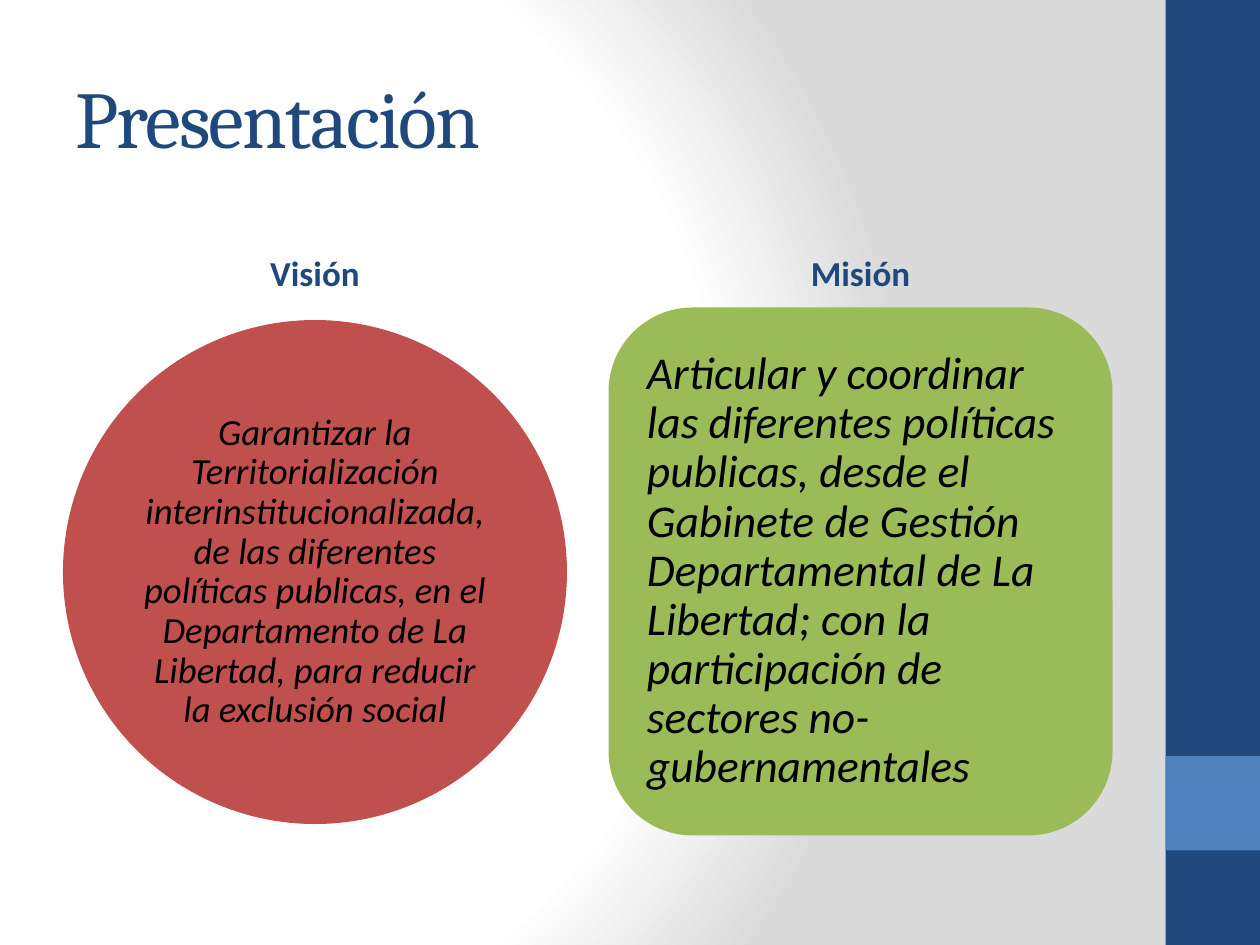
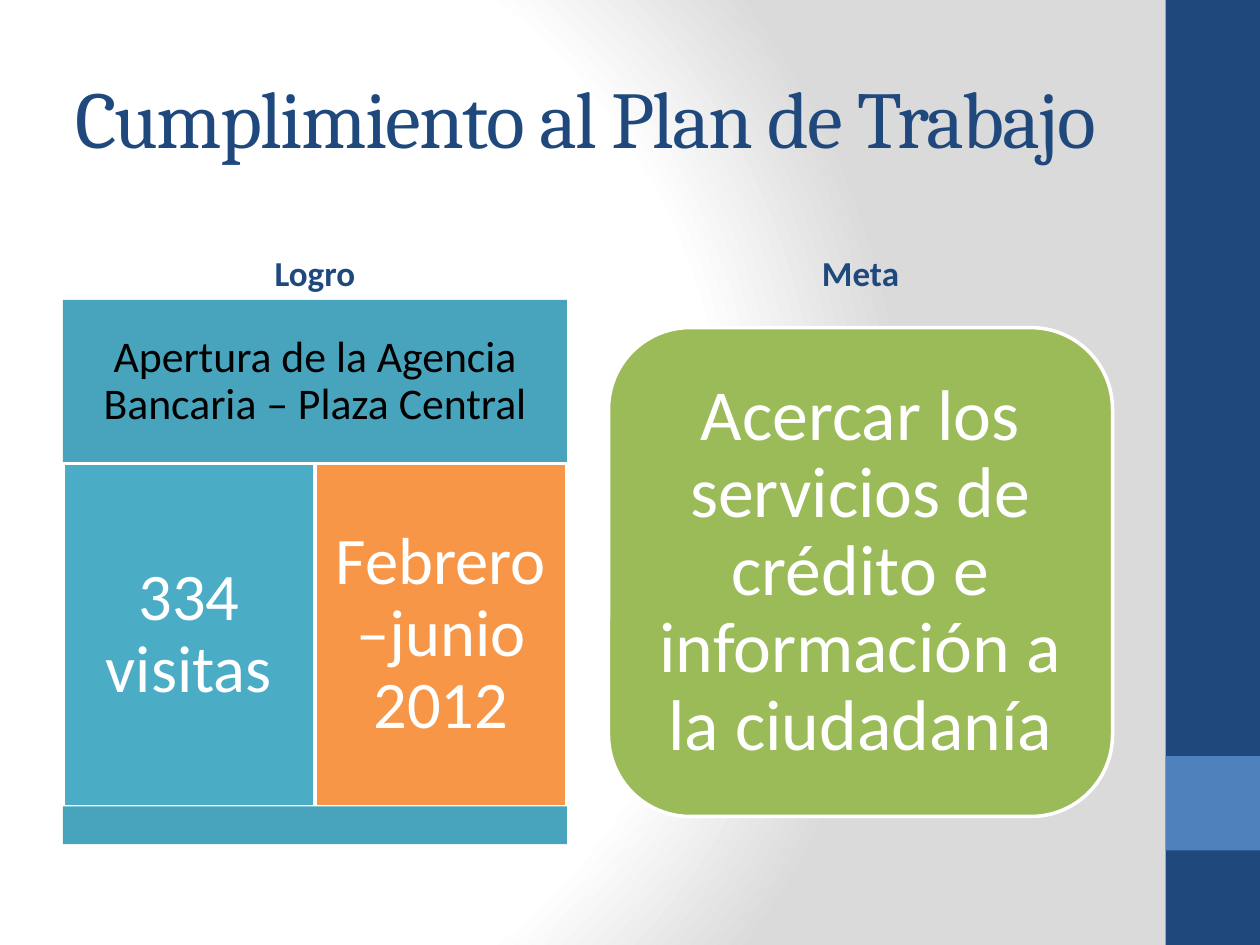
from lxml.etree import SubElement
from pptx import Presentation
from pptx.dml.color import RGBColor
from pptx.enum.shapes import MSO_SHAPE
from pptx.enum.text import MSO_ANCHOR, PP_ALIGN
from pptx.oxml.ns import qn
from pptx.util import Inches, Pt

COLORS = {
    "navy": "1F497D", "blue": "4F81BD", "red": "C0504D", "green": "9BBB59",
    "teal": "48A4BD", "aqua": "4BACC6", "orange": "F79646",
    "white": "FFFFFF", "gray": "DADADA", "black": "000000",
}
LEFT, WIDE, STEP = 0.5, 4, 4.33


def tint(name):
    return RGBColor.from_string(COLORS[name])


def write(shape, text, size, color, inset=0.1, align=PP_ALIGN.CENTER,
          anchor=MSO_ANCHOR.MIDDLE, face="Calibri", bold=False,
          italic=False, lead=0.9):
    frame = shape.text_frame
    frame.text = text
    frame.word_wrap = True
    frame.vertical_anchor = anchor
    frame.margin_left = frame.margin_right = Inches(inset)
    frame.margin_top = frame.margin_bottom = Inches(inset)
    para = frame.paragraphs[0]
    para.alignment = align
    para.line_spacing = lead
    font = para.runs[0].font
    font.name, font.size = face, Pt(size)
    font.bold, font.italic = bold, italic
    font.color.rgb = tint(color)
    return para.runs[0]


def block(slide, box, fill, kind=MSO_SHAPE.RECTANGLE, edge=False):
    shape = slide.shapes.add_shape(kind, *map(Inches, box))
    shape.shadow.inherit = False
    shape.fill.solid()
    shape.fill.fore_color.rgb = tint(fill)
    if edge:
        shape.line.color.rgb = tint("white")
        shape.line.width = Pt(2)
    else:
        shape.line.fill.background()
    return shape


def label(slide, box, text, size, **style):
    field = slide.shapes.add_textbox(*map(Inches, box))
    return write(field, text, size, "navy", lead=1, **style)


def backdrop(master):
    master.background.fill.gradient()
    grad = master.element.find(".//" + qn("a:gradFill"))
    for child in list(grad):
        grad.remove(child)
    stops = SubElement(grad, qn("a:gsLst"))
    for pos, name in ((0, "white"), (75, "white"), (100, "gray")):
        stop = SubElement(stops, qn("a:gs"), pos=str(pos * 1000))
        SubElement(stop, qn("a:srgbClr"), val=COLORS[name])
    path = SubElement(grad, qn("a:path"), path="circle")
    SubElement(path, qn("a:fillToRect"),
               l="20000", t="50000", r="100000", b="50000")


def page(deck, title, heads):
    slide = deck.slides.add_slide(deck.slide_layouts[6])
    block(slide, (9.25, 0, 0.75, 7.5), "navy")
    block(slide, (9.25, 6, 0.75, 0.75), "blue")
    run = label(slide, (LEFT, 0.3, STEP + WIDE, 1.25), title, 46,
                align=PP_ALIGN.LEFT, face="Cambria")
    run.font._element.set("spc", "-100")
    for col, head in enumerate(heads):
        label(slide, (LEFT + col * STEP, 1.68, WIDE, 0.7), head, 20,
              inset=0.05, anchor=MSO_ANCHOR.BOTTOM, bold=True)
    return slide


def vision(slide, box, text):
    disc = block(slide, box, "red", MSO_SHAPE.OVAL)
    write(disc, text, 21, "black", inset=0.03, italic=True)


def mission(slide, box, text):
    card = block(slide, box, "green", MSO_SHAPE.ROUNDED_RECTANGLE)
    write(card, text, 26, "black", inset=0.11, align=PP_ALIGN.LEFT,
          italic=True)


def result(slide, box, head, facts):
    left, top, width, height = box
    high, foot = 1.3, 0.3
    mid = height - high - foot
    write(block(slide, (left, top, width, high), "teal"), head, 25, "black")
    cell = width / len(facts)
    for col, (text, fill) in enumerate(facts):
        spot = (left + col * cell, top + high, cell, mid)
        write(block(slide, spot, fill, edge=True), text, 38, "white",
              inset=0.16)
    block(slide, (left, top + height - foot, width, foot), "teal")


def goal(slide, box, text):
    card = block(slide, box, "green", MSO_SHAPE.ROUNDED_RECTANGLE, True)
    write(card, text, 41, "white", inset=0.17)


def main():
    deck = Presentation()
    deck.slide_width, deck.slide_height = Inches(10), Inches(7.5)
    backdrop(deck.slide_master)

    intro = page(deck, "Presentación", ("Visión", "Misión"))
    vision(intro, (LEFT, 2.54, WIDE, 4),
           "Garantizar la Territorialización interinstitucionalizada, "
           "de las diferentes políticas publicas, en el Departamento de "
           "La Libertad, para reducir la exclusión social")
    mission(intro, (LEFT + STEP, 2.44, WIDE, 4.19),
            "Articular y coordinar las diferentes políticas publicas, "
            "desde el Gabinete de Gestión Departamental de La Libertad; "
            "con la participación de sectores no-gubernamentales")

    plan = page(deck, "Cumplimiento al Plan de Trabajo", ("Logro", "Meta"))
    result(plan, (LEFT, 2.38, WIDE, 4.32),
           "Apertura de la Agencia Bancaria – Plaza Central",
           (("334 visitas", "aqua"), ("Febrero –junio 2012", "orange")))
    goal(plan, (LEFT + STEP, 2.6, WIDE, 3.88),
         "Acercar los servicios de crédito e información a la ciudadanía")

    deck.save("out.pptx")


if __name__ == "__main__":
    main()
